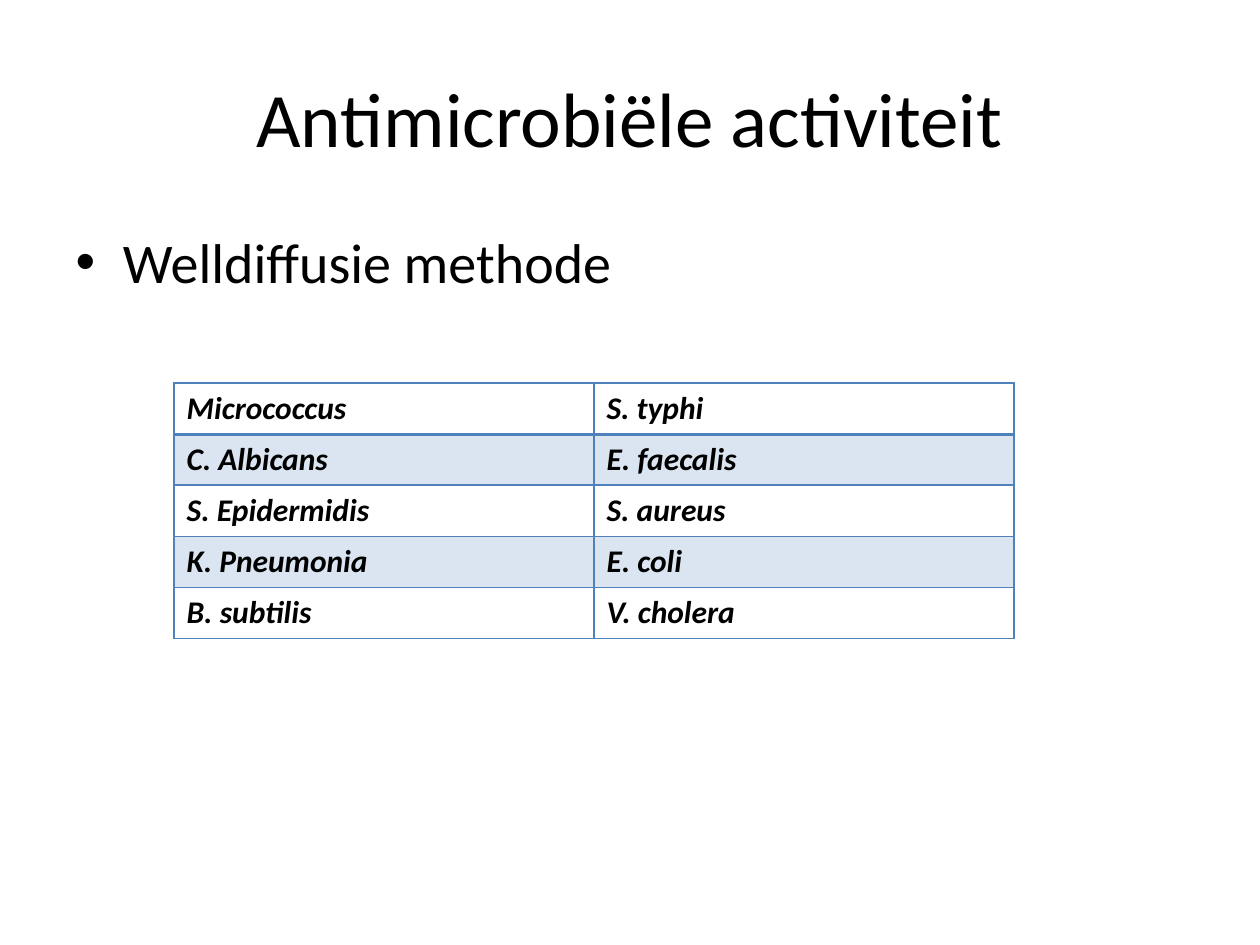
import dataclasses

import pptx
import pptx.dml.color
import pptx.enum.text
import pptx.oxml
import pptx.oxml.ns
import pptx.util


@dataclasses.dataclass(frozen=True)
class Theme:
    font: str = "Calibri"
    ink: str = "000000"
    blue: str = "4F81BD"
    tint: int = 20
    title: int = 44
    body: int = 32
    cell: int = 18
    thin: int = 1
    thick: int = 2


class Deck:
    def __init__(self, theme):
        self.theme = theme
        self.show = pptx.Presentation()
        self.show.slide_width = self.emu(1260)
        self.show.slide_height = self.emu(945)
        self.slide = self.show.slides.add_slide(self.show.slide_layouts[1])

    def emu(self, px):
        return pptx.util.Emu(round(px * 914400 / 126))

    def color(self, code):
        return pptx.dml.color.RGBColor.from_string(code)

    def label(self, para, text, size, strong=None):
        run = para.add_run()
        run.text = text
        font = run.font
        font.name = self.theme.font
        font.size = pptx.util.Pt(size)
        font.color.rgb = self.color(self.theme.ink)
        font.bold = font.italic = strong

    def place(self, shape, box):
        shape.left, shape.top, shape.width, shape.height = map(self.emu, box)

    def title(self, text, box):
        shape = self.slide.shapes.title
        self.place(shape, box)
        shape.text_frame.vertical_anchor = pptx.enum.text.MSO_ANCHOR.MIDDLE
        para = shape.text_frame.paragraphs[0]
        para.alignment = pptx.enum.text.PP_ALIGN.CENTER
        self.label(para, text, self.theme.title)

    def body(self, text, box):
        shape = self.slide.placeholders[1]
        self.place(shape, box)
        self.label(shape.text_frame.paragraphs[0], text, self.theme.body)

    def border(self, cell, side, width):
        space = pptx.oxml.ns.nsdecls("a")
        line = pptx.oxml.parse_xml(
            f'<a:ln{side} {space} w="{pptx.util.Pt(width)}"><a:solidFill>'
            f'<a:srgbClr val="{self.theme.blue}"/></a:solidFill></a:ln{side}>'
        )
        cell._tc.get_or_add_tcPr().append(line)

    def shade(self, cell):
        cell.fill.solid()
        cell.fill.fore_color.rgb = self.color(self.theme.blue)
        code = cell._tc.xpath("a:tcPr/a:solidFill/a:srgbClr")[0]
        alpha = pptx.oxml.parse_xml(
            f'<a:alpha {pptx.oxml.ns.nsdecls("a")} val="{self.theme.tint * 1000}"/>'
        )
        code.append(alpha)

    def table(self, rows, box):
        look = self.theme
        frame = self.slide.shapes.add_table(
            len(rows), len(rows[0]), *map(self.emu, box)
        )
        table = frame.table
        table.first_row = table.horz_banding = False
        for r, row in enumerate(rows):
            for c, text in enumerate(row):
                cell = table.cell(r, c)
                self.label(cell.text_frame.paragraphs[0], text, look.cell, True)
                for side in "LRTB":
                    heavy = (r, side) in ((0, "B"), (1, "T"))
                    self.border(cell, side, look.thick if heavy else look.thin)
                if r % 2:
                    self.shade(cell)
                else:
                    cell.fill.background()

    def save(self):
        self.show.save("out.pptx")


def main():
    deck = Deck(Theme())
    deck.title("Antimicrobiële activiteit", (63, 38, 1134, 158))
    deck.body("Welldiffusie methode", (63, 221, 1134, 624))
    germs = [
        ("Micrococcus", "S. typhi"),
        ("C. Albicans", "E. faecalis"),
        ("S. Epidermidis", "S. aureus"),
        ("K. Pneumonia", "E. coli"),
        ("B. subtilis", "V. cholera"),
    ]
    deck.table(germs, (174, 383, 840, 255))
    deck.save()


if __name__ == "__main__":
    main()
